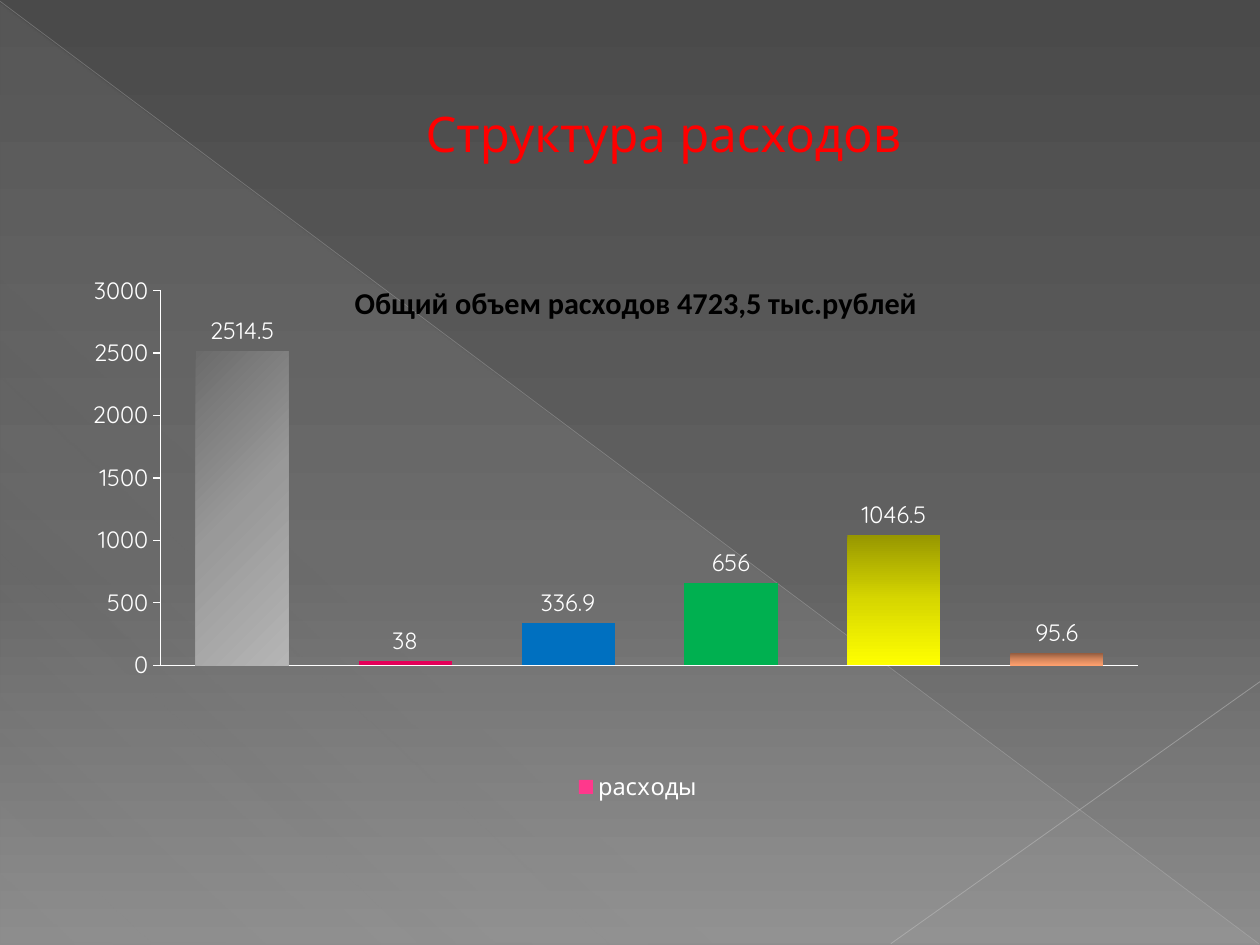
from lxml import etree
from pptx import Presentation
from pptx import util as u
from pptx.chart import data as chart_data
from pptx.dml.color import RGBColor
from pptx.enum import chart as ch, shapes, text
from pptx.oxml import ns

FONT = "Quicksand"
WHITE = RGBColor(0xFF, 0xFF, 0xFF)
BLACK = RGBColor(0, 0, 0)
RED = RGBColor(0xFF, 0, 0)
OUTLINE = RGBColor(0xB1, 0x27, 0x61)
PINK = RGBColor(0xFF, 0x38, 0x8C)
PALE = RGBColor(0xD2, 0xD2, 0xD2)
LONG_LINE = RGBColor(0xBF, 0xBF, 0xBF)
SHORT_LINE = RGBColor(0xC6, 0xC6, 0xC6)
CRIMSON = RGBColor(0xE4, 0x00, 0x59)
BLUE = RGBColor(0x00, 0x70, 0xC0)
GREEN = RGBColor(0x00, 0xB0, 0x50)
BACKDROP = [RGBColor(0x4A, 0x4A, 0x4A), RGBColor(0x62, 0x62, 0x62), RGBColor(0x8C, 0x8C, 0x8C)]
GRAYS = [RGBColor(0x6B, 0x6B, 0x6B), RGBColor(0x99, 0x99, 0x99), RGBColor(0xB5, 0xB5, 0xB5)]
YELLOWS = [RGBColor(0x97, 0x97, 0x00), RGBColor(0xD7, 0xD7, 0x00), RGBColor(0xFF, 0xFF, 0x00)]
ORANGES = [RGBColor(0x96, 0x5E, 0x40), RGBColor(0xD5, 0x86, 0x5C), RGBColor(0xFC, 0x9F, 0x6D)]

EXPENSES = [
    (2514.5, GRAYS, 45),
    (38, CRIMSON, None),
    (336.9, BLUE, None),
    (656, GREEN, None),
    (1046.5, YELLOWS, 90),
    (95.6, ORANGES, 90),
]


def add_child(parent, tag, **attributes):
    """Append a namespaced element and return it."""
    child = etree.SubElement(parent, ns.qn(tag))
    for name, value in attributes.items():
        child.set(name, str(value))
    return child


def add_color(parent, color, opacity=100):
    """Append an RGB colour with an opacity in percent."""
    node = add_child(parent, "a:srgbClr", val=color)
    if opacity < 100:
        add_child(node, "a:alpha", val=opacity * 1000)


def paint_gradient(fill, colors, positions, angle, opacities=(100, 100, 100)):
    """Fill with a linear gradient turned clockwise by the angle."""
    fill.gradient()
    fill.gradient_angle = 360 - angle
    stops = fill.gradient_stops[0]._gs.getparent()
    for stop in list(stops):
        stops.remove(stop)
    for color, position, opacity in zip(colors, positions, opacities):
        add_color(add_child(stops, "a:gs", pos=position * 1000), color, opacity)


def add_thin_line(page, start, end, color, width, opacity):
    """Draw a translucent straight line between two points in inches."""
    ends = [u.Inches(value) for value in start + end]
    line = page.shapes.add_connector(shapes.MSO_CONNECTOR.STRAIGHT, *ends)
    line.line.width = u.Pt(width)
    line.line.color.rgb = color
    properties = line._element.spPr
    node = properties.find(".//" + ns.qn("a:srgbClr"))
    add_child(node, "a:alpha", val=opacity * 1000)
    add_child(properties, "a:effectLst")


def add_backdrop(page, left, top, width, height):
    """Paint the background, the corner triangle and the two diagonals."""
    paint_gradient(page.background.fill, BACKDROP, (0, 60, 100), 90)
    triangle = page.shapes.add_shape(
        shapes.MSO_SHAPE.RIGHT_TRIANGLE, left, top + u.Inches(0.02), width, height - u.Inches(0.02))
    triangle.shadow.inherit = False
    triangle.line.fill.background()
    paint_gradient(triangle.fill, [PALE] * 3, (0, 70, 100), 133, (10, 8, 1))
    add_thin_line(page, (0, 0.01), (9.99, 7.49), LONG_LINE, 0.39, 35)
    add_thin_line(page, (10, 5.41), (7.07, 7.49), SHORT_LINE, 0.47, 45)


def add_title(page, left, top, width, height):
    """Place and format the slide title."""
    title = page.shapes.title
    page.shapes._spTree.append(title._element)
    title.left, title.top, title.width, title.height = left, top, width, height
    frame = title.text_frame
    frame.word_wrap = True
    frame.vertical_anchor = text.MSO_ANCHOR.MIDDLE
    para = frame.paragraphs[0]
    para.alignment = text.PP_ALIGN.CENTER
    properties = para._p.get_or_add_pPr()
    properties.set("marL", str(u.Inches(0.53)))
    properties.set("indent", "0")
    span = para.add_run()
    span.text = "Структура расходов"
    span.font.size = u.Pt(28)
    span.font.name = FONT
    span.font.color.rgb = RED
    outline = etree.Element(ns.qn("a:ln"), w=str(u.Pt(0.5)))
    add_color(add_child(outline, "a:solidFill"), OUTLINE)
    span.font._element.insert(0, outline)


def set_layout(part, index, target=None, **fractions):
    """Give a chart part a manual layout in fractions of the chart."""
    for old in part.findall(ns.qn("c:layout")):
        part.remove(old)
    layout = etree.Element(ns.qn("c:layout"))
    manual = add_child(layout, "c:manualLayout")
    if target:
        add_child(manual, "c:layoutTarget", val=target)
    for mode in ("xMode", "yMode"):
        add_child(manual, "c:" + mode, val="edge")
    for name, value in fractions.items():
        add_child(manual, "c:" + name, val=value)
    part.insert(index, layout)


def format_axes(chart):
    """Show white axis lines, with labels on the value axis only."""
    for axis in (chart.category_axis, chart.value_axis):
        axis.has_major_gridlines = False
        axis.minor_tick_mark = ch.XL_TICK_MARK.NONE
        axis.format.line.color.rgb = WHITE
        axis.format.line.width = u.Pt(0.75)
        axis.tick_labels.font.size = u.Pt(13.5)
    chart.category_axis.major_tick_mark = ch.XL_TICK_MARK.NONE
    chart.category_axis.tick_label_position = ch.XL_TICK_LABEL_POSITION.NONE
    value_axis = chart.value_axis
    value_axis.major_tick_mark = ch.XL_TICK_MARK.OUTSIDE
    value_axis.minimum_scale, value_axis.maximum_scale, value_axis.major_unit = 0, 3000, 500


def format_columns(plot):
    """Colour each column and label it with its value."""
    plot.gap_width = 75
    plot.vary_by_categories = False
    series = plot.series[0]
    series.format.fill.solid()
    series.format.fill.fore_color.rgb = PINK
    for index, (_, color, angle) in enumerate(EXPENSES):
        fill = series.points[index].format.fill
        if angle:
            paint_gradient(fill, color, (0, 50, 100), angle)
        else:
            fill.solid()
            fill.fore_color.rgb = color
    labels = series.data_labels
    labels.show_value = True
    labels.position = ch.XL_LABEL_POSITION.OUTSIDE_END
    labels.font.size = u.Pt(13.5)
    labels.font.color.rgb = WHITE


def add_expense_chart(page, left, top, width, height):
    """Add the column chart of expenses with its title and legend."""
    figures = chart_data.CategoryChartData()
    figures.categories = [str(number + 1) for number in range(len(EXPENSES))]
    figures.add_series("расходы", [value for value, _, _ in EXPENSES])
    chart = page.shapes.add_chart(
        ch.XL_CHART_TYPE.COLUMN_CLUSTERED, left, top, width, height, figures).chart
    chart.font.size = u.Pt(17.3)
    chart.font.name = FONT
    chart.font.color.rgb = WHITE
    format_axes(chart)
    format_columns(chart.plots[0])
    chart.has_title = True
    span = chart.chart_title.text_frame.paragraphs[0].add_run()
    span.text = "Общий объем расходов 4723,5 тыс.рублей"
    span.font.size = u.Pt(17.3)
    span.font.bold = True
    span.font.name = "Calibri"
    span.font.color.rgb = BLACK
    chart.has_legend = True
    chart.legend.position = ch.XL_LEGEND_POSITION.BOTTOM
    chart.legend.include_in_layout = False
    chart.legend.font.size = u.Pt(13.5)
    chart.legend.font.color.rgb = WHITE
    set_layout(chart.chart_title._element, 1, x=0.26, y=0.09)
    set_layout(chart.legend._element, 1, x=0.44, y=0.8, w=0.13, h=0.05)
    plot_area = chart._chartSpace.chart.plotArea
    set_layout(plot_area, 0, "inner", x=0.1, y=0.11, w=0.83, h=0.54)


def main():
    """Build the slide and save it."""
    deck = Presentation()
    deck.slide_width, deck.slide_height = u.Inches(10), u.Inches(7.5)
    page = deck.slides.add_slide(deck.slide_layouts[5])
    add_backdrop(page, 0, 0, deck.slide_width, deck.slide_height)
    add_title(page, u.Inches(0.5), u.Inches(0.29), u.Inches(9), u.Inches(1.53))
    add_expense_chart(page, u.Inches(0.34), u.Inches(1.7), u.Inches(9.35), u.Inches(5.51))
    deck.save("out.pptx")


if __name__ == "__main__":
    main()
